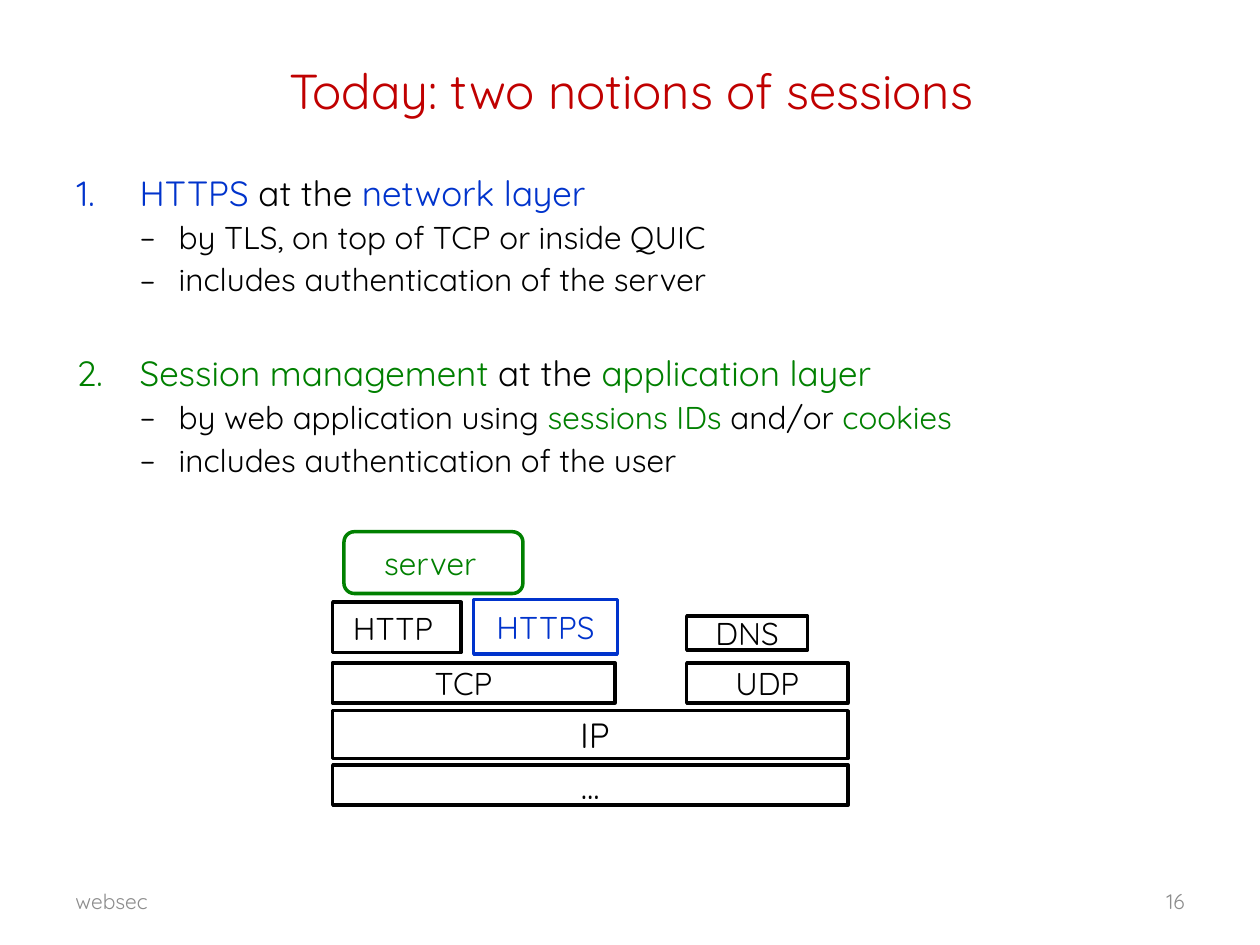
from lxml import etree
from pptx import Presentation
from pptx.dml.color import RGBColor
from pptx.enum.shapes import MSO_SHAPE
from pptx.enum.text import MSO_ANCHOR, PP_ALIGN
from pptx.oxml.ns import qn
from pptx.util import Inches, Pt

FONT = "Quicksand"
BLACK, WHITE, GREY = "000000", "FFFFFF", "8C8C8C"
RED, BLUE, GREEN = "C00000", "0033CC", "008000"
RECT, ROUNDED = MSO_SHAPE.RECTANGLE, MSO_SHAPE.ROUNDED_RECTANGLE
LEFT, CENTER, RIGHT = PP_ALIGN.LEFT, PP_ALIGN.CENTER, PP_ALIGN.RIGHT
TOP, MIDDLE = MSO_ANCHOR.TOP, MSO_ANCHOR.MIDDLE

TOPICS = [
    ([("HTTPS ", BLUE), ("at the ", BLACK), ("network layer", BLUE)],
     [[("by TLS, on top of TCP or inside QUIC", BLACK)],
      [("includes authentication of the server", BLACK)]]),
    ([("Session management ", GREEN), ("at the ", BLACK), ("application layer", GREEN)],
     [[("by web application using ", BLACK), ("sessions IDs ", GREEN),
       ("and/or ", BLACK), ("cookies", GREEN)],
      [("includes authentication of the user", BLACK)]]),
]

# label, offset and size within the stack, font size, colour, left and right extra inset
LAYERS = [
    ("...", (0, 1.85, 4.09, 0.32), 20, BLACK, 0, 0),
    ("IP", (0, 1.42, 4.09, 0.38), 20, BLACK, 0.07, 0),
    ("HTTP", (0, 0.56, 1.02, 0.4), 18, BLACK, 0, 0.06),
    ("TCP", (0, 1.04, 2.24, 0.32), 18, BLACK, 0, 0.16),
    ("UDP", (2.81, 1.04, 1.28, 0.32), 18, BLACK, 0, 0),
    ("DNS", (2.81, 0.67, 0.96, 0.27), 18, BLACK, 0, 0),
    ("HTTPS", (1.12, 0.54, 1.14, 0.43), 18, BLUE, 0, 0),
]


def rgb(color):
    """Turn a hex string into a colour."""
    return RGBColor.from_string(color)


def style(r, size, color):
    """Set the font of a run."""
    r.font.name = FONT
    r.font.size = Pt(size)
    r.font.color.rgb = rgb(color)


def add_text_box(s, box, anchor):
    """Add an empty wrapping text box and return its text frame."""
    tf = s.shapes.add_textbox(*map(Inches, box)).text_frame
    tf.word_wrap = True
    tf.vertical_anchor = anchor
    return tf


def add_label(s, box, text, size, color, align):
    """Add a single vertically centred line of text."""
    p = add_text_box(s, box, MIDDLE).paragraphs[0]
    p.text = text
    p.alignment = align
    style(p.runs[0], size, color)


def add_item(p, parts, size, space, margin, indent, bullet, **attrs):
    """Fill a paragraph with coloured runs and a hanging bullet."""
    p.space_before = Pt(space)
    pPr = p._p.get_or_add_pPr()
    pPr.set("marL", str(Inches(margin)))
    pPr.set("indent", str(Inches(-indent)))
    etree.SubElement(pPr, qn("a:buFont"), typeface=FONT)
    etree.SubElement(pPr, qn(bullet), **attrs)
    for text, color in parts:
        r = p.add_run()
        r.text = text
        style(r, size, color)


def add_topics(s, box):
    """Add the numbered topics with their dashed details."""
    tf = add_text_box(s, box, TOP)
    for number, (heading, details) in enumerate(TOPICS, 1):
        p = tf.paragraphs[0] if number == 1 else tf.add_paragraph()
        add_item(p, heading, 20, 0 if number == 1 else 30.4, 0.5, 0.5,
                 "a:buAutoNum", type="arabicPeriod", startAt=str(number))
        for detail in details:
            p = tf.add_paragraph()
            p.level = 1
            add_item(p, detail, 18, 2.7, 0.81, 0.31, "a:buChar", char="–")


def add_layer(s, shape, box, text, size, color, left=0, right=0):
    """Add one outlined, labelled block."""
    sp = s.shapes.add_shape(shape, *map(Inches, box))
    sp.shadow.inherit = False
    sp.fill.background()
    sp.line.color.rgb = rgb(color)
    sp.line.width = Pt(2)
    tf = sp.text_frame
    tf.word_wrap = True
    tf.vertical_anchor = MIDDLE
    tf.margin_left, tf.margin_right = Inches(0.1 + left), Inches(0.1 + right)
    p = tf.paragraphs[0]
    p.text = text
    p.alignment = CENTER
    style(p.runs[0], size, color)
    return sp


def add_stack(s, x, y):
    """Add the protocol stack with the server on top."""
    for text, (dx, dy, w, h), size, color, left, right in LAYERS:
        add_layer(s, RECT, (x + dx, y + dy, w, h), text, size, color, left, right)
    server = add_layer(s, ROUNDED, (x + 0.09, y, 1.42, 0.49), "server", 18, GREEN, right=0.05)
    server.fill.solid()
    server.fill.fore_color.rgb = rgb(WHITE)


def main():
    """Build the slide and save it."""
    prs = Presentation()
    prs.slide_width, prs.slide_height = Inches(10), Inches(7.5)
    s = prs.slides.add_slide(prs.slide_layouts[6])
    add_label(s, (0.51, 0.21, 9, 1.01), "Today: two notions of sessions", 28, RED, CENTER)
    add_topics(s, (0.51, 1.31, 9, 5.31))
    add_label(s, (0.5, 6.95, 2.33, 0.4), "websec", 12, GREY, LEFT)
    add_label(s, (7.17, 6.95, 2.33, 0.4), "16", 12, GREY, RIGHT)
    add_stack(s, 2.64, 4.22)
    prs.save("out.pptx")


if __name__ == "__main__":
    main()
